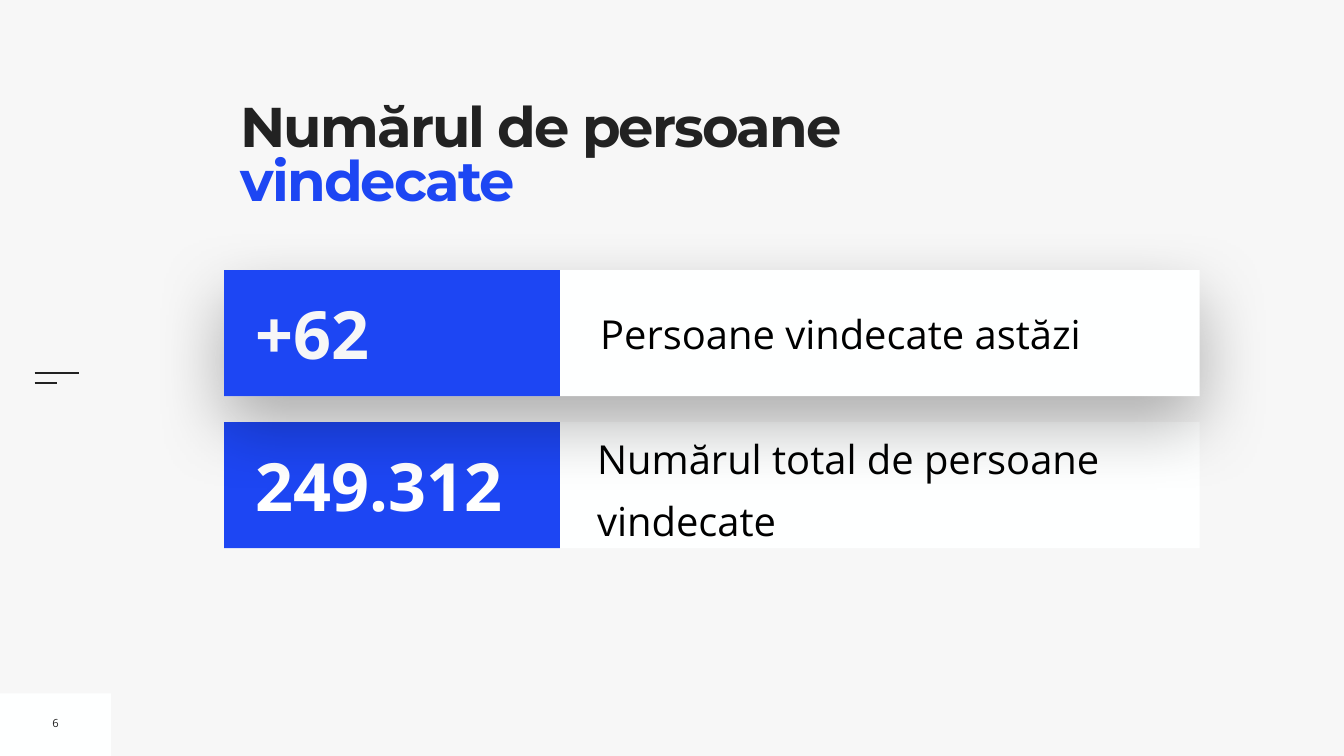
"""Build the slide with the number of recovered persons."""
from lxml import etree
from pptx import Presentation
from pptx.dml.color import RGBColor
from pptx.enum.shapes import MSO_CONNECTOR, MSO_SHAPE
from pptx.enum.text import MSO_ANCHOR, PP_ALIGN
from pptx.oxml.ns import qn
from pptx.util import Cm, Pt

RECTANGLE = MSO_SHAPE.RECTANGLE
STRAIGHT = MSO_CONNECTOR.STRAIGHT
TOP = MSO_ANCHOR.TOP
MIDDLE = MSO_ANCHOR.MIDDLE
CENTER = PP_ALIGN.CENTER

COLORS = {
    "background": "F7F7F7",
    "panel": "FEFFFF",
    "accent": "1D46F3",
    "dark": "222222",
    "black": "000000",
    "white": "FFFFFF",
}

presentation = Presentation()
presentation.slide_width = Cm(67.74)
presentation.slide_height = Cm(38.1)
slide = presentation.slides.add_slide(presentation.slide_layouts[6])
slide.background.fill.solid()
slide.background.fill.fore_color.rgb = RGBColor.from_string(COLORS["background"])


def add_panel(left, top, width, height, color):
    shape = slide.shapes.add_shape(RECTANGLE, Cm(left), Cm(top), Cm(width), Cm(height))
    shape.shadow.inherit = False
    shape.fill.solid()
    shape.fill.fore_color.rgb = RGBColor.from_string(COLORS[color])
    shape.line.fill.background()
    return shape


def add_text(box, runs, size, font="Open Sans", bold=False, inset=0.25, anchor=MIDDLE):
    shape = slide.shapes.add_textbox(*[Cm(length) for length in box])
    frame = shape.text_frame
    frame.word_wrap = True
    frame.vertical_anchor = anchor
    frame.margin_left = frame.margin_right = Cm(inset)
    frame.margin_top = frame.margin_bottom = Cm(inset)
    paragraph = frame.paragraphs[0]
    for text, color in runs:
        run = paragraph.add_run()
        run.text = text
        run.font.name = font
        run.font.size = Pt(size)
        run.font.bold = bold
        run.font.color.rgb = RGBColor.from_string(COLORS[color])
    return paragraph


add_panel(0, 34.95, 5.59, 3.15, "panel")
for y, end in [(18.82, 3.99), (19.28, 2.87)]:
    line = slide.shapes.add_connector(STRAIGHT, Cm(1.75), Cm(y), Cm(end), Cm(y))
    line.line.color.rgb = RGBColor.from_string(COLORS["dark"])
    line.line.width = Pt(3)
    etree.SubElement(line._element.spPr, qn("a:effectLst"))

title = add_text(
    (12.12, 5.26, 33.05, 6.93),
    [("Numărul de persoane ", "dark"), ("vindecate", "accent")],
    80, font="Montserrat", bold=True, inset=0, anchor=TOP,
)
title.line_spacing = 0.8
for run in title.runs:
    run.font._element.set("spc", "-270")

page_number = add_text((2.1, 35.79, 1.4, 1.3), [("6", "dark")], 16)
page_number.alignment = CENTER

rows = [
    (21.27, "249.312", "white", "Numărul total de persoane vindecate",
     (30.1, 21.31, 30.35, 5.99), 0),
    (13.61, "+62", "background", "Persoane vindecate astăzi",
     (30, 15.32, 29.87, 2.95), 0.25),
]
for top, number, number_color, label, label_box, inset in rows:
    panel = add_panel(11.3, top, 49.17, 6.35, "panel")
    label_paragraph = add_text(label_box, [(label, "black")], 57, inset=inset)
    add_panel(11.3, top, 16.92, 6.35, "accent")
    add_text((12.65, top + 0.89, 15.32, 4.57), [(number, number_color)], 95, bold=True)
    if number == "249.312":
        label_paragraph.line_spacing = 1.3
        label_paragraph.space_before = Pt(20)
    else:
        effects = panel._element.spPr.find(qn("a:effectLst"))
        shadow = etree.SubElement(
            effects, qn("a:outerShdw"), blurRad=str(Pt(100)), dist=str(Pt(40)),
            dir="5400000", rotWithShape="0",
        )
        shadow_color = etree.SubElement(shadow, qn("a:srgbClr"), val=COLORS["black"])
        etree.SubElement(shadow_color, qn("a:alpha"), val="30000")

presentation.save("out.pptx")
